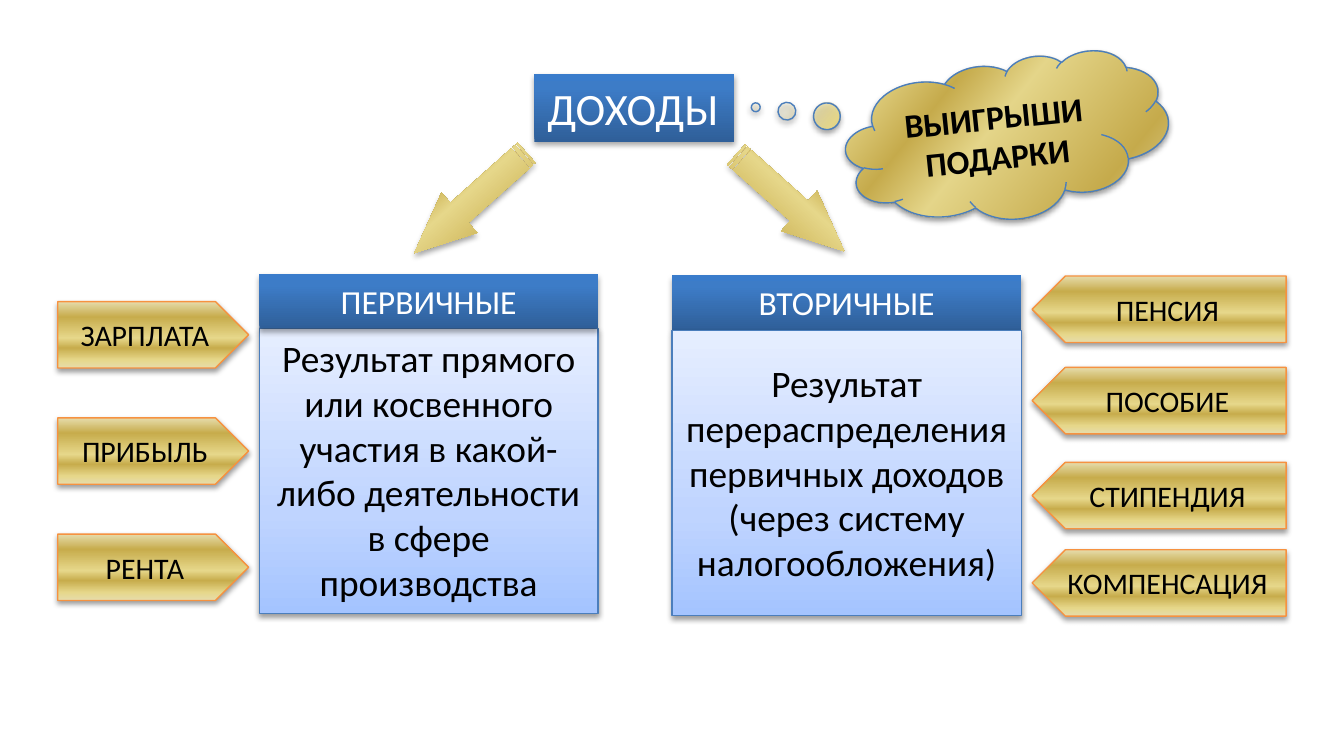
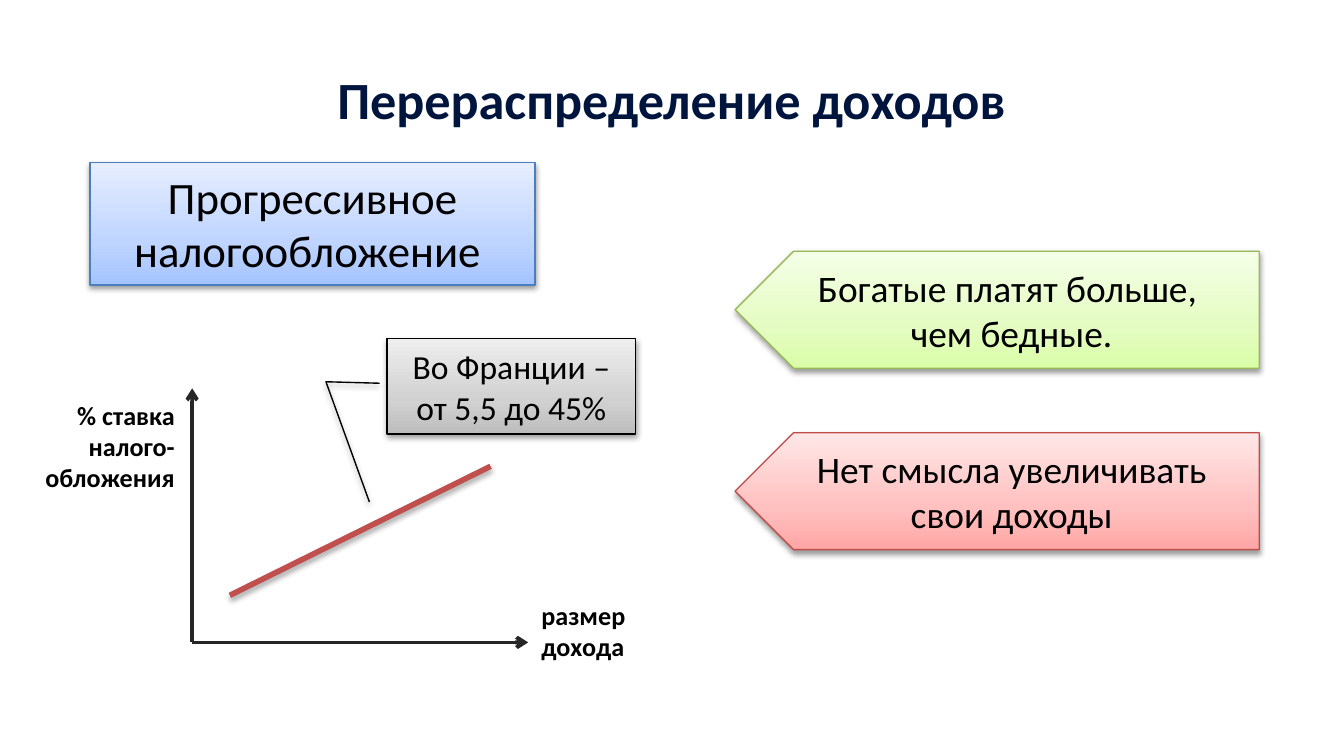
from dataclasses import dataclass
from typing import Any, NamedTuple, Optional

from lxml.etree import SubElement
from pptx import Presentation
from pptx.dml.color import RGBColor
from pptx.enum.shapes import MSO_CONNECTOR, MSO_SHAPE
from pptx.enum.text import MSO_ANCHOR, MSO_AUTO_SIZE, PP_ALIGN
from pptx.oxml.ns import qn
from pptx.util import Inches, Pt

WIDE = Inches(10)
HIGH = WIDE * 9 // 16
CELL = WIDE / 100


class Box(NamedTuple):
    col: float
    row: float
    wide: float
    high: float


class Stop(NamedTuple):
    at: int
    tint: str
    clear: int = 100


class Paint(NamedTuple):
    stops: tuple[Stop, ...]
    angle: int = 270


class Shade(NamedTuple):
    alpha: int
    gap: float


def three(low: str, mid: str, top: str) -> Paint:
    return Paint((Stop(0, low), Stop(35, mid), Stop(100, top)))


def metal(clear: int = 100, angle: int = 270) -> Paint:
    tints = ("E6D78A", "C7AC4C", "E6D78A", "C7AC4C", "E6DCAC")
    rest = tuple(Stop(at, tint) for at, tint in zip((12, 30, 45, 77, 100), tints))
    return Paint((Stop(0, "E6DCAC", clear), *rest), angle)


@dataclass(frozen=True)
class Theme:
    font: str = "Calibri"
    black: str = "000000"
    white: str = "FFFFFF"
    navy: str = "00153E"
    axis: str = "262626"
    trend: str = "C0504D"
    edge: str = "4B7EBC"
    rim: str = "F69240"
    leaf: str = "98B955"
    rose: str = "BF4C48"
    tiny: int = 14
    small: int = 16
    label: int = 18
    body: int = 20
    large: int = 24
    title: int = 28
    thin: float = 0.75
    blue: Paint = Paint((Stop(0, "2F5F99"), Stop(80, "3D7CC7"), Stop(100, "3A7CCB")))
    sky: Paint = three("A4C4FF", "BFD4FF", "E6EEFF")
    gray: Paint = three("BDBDBD", "D1D1D1", "EEEEEE")
    green: Paint = three("DAFDA7", "E4FCC2", "F5FFE7")
    red: Paint = three("FFA6A5", "FFC0BF", "FFE7E7")
    gold: Paint = metal()
    cloud: Paint = metal(28, 45)
    soft: Shade = Shade(38, 1.6)
    deep: Shade = Shade(35, 1.8)


THEME = Theme()


@dataclass(frozen=True)
class Words:
    text: str
    size: int = THEME.body
    tint: str = THEME.black
    bold: bool = False
    align: PP_ALIGN = PP_ALIGN.CENTER
    anchor: MSO_ANCHOR = MSO_ANCHOR.TOP
    wrap: bool = True
    top: float = 0.5


@dataclass(frozen=True)
class Form:
    kind: MSO_SHAPE
    box: Box
    paint: Paint
    line: Optional[str] = None
    shade: Shade = THEME.soft
    words: Optional[Words] = None
    turn: float = 0
    flip: bool = False
    bends: tuple[float, ...] = ()


@dataclass(frozen=True)
class Stroke:
    start: tuple[float, float]
    end: tuple[float, float]
    tint: str
    width: float
    arrow: bool = False
    shade: Optional[Shade] = None


def span(*cells: float) -> list[int]:
    return [round(cell * CELL) for cell in cells]


def write(frame: Any, words: Words) -> None:
    frame.text = words.text
    frame.auto_size = MSO_AUTO_SIZE.NONE
    frame.word_wrap = words.wrap
    frame.vertical_anchor = words.anchor
    frame.margin_top = span(words.top)[0]
    for para in frame.paragraphs:
        para.alignment = words.align
        para.font.name = THEME.font
        para.font.size = Pt(words.size)
        para.font.bold = words.bold
        para.font.color.rgb = RGBColor.from_string(words.tint)


def tone(node: Any, tint: str, alpha: int) -> None:
    color = SubElement(node, qn("a:srgbClr"), val=tint)
    if alpha < 100:
        SubElement(color, qn("a:alpha"), val=str(alpha * 1000))


def blend(item: Any, paint: Paint) -> None:
    item.fill.gradient()
    grad = item.element.spPr.find(qn("a:gradFill"))
    for child in list(grad):
        grad.remove(child)
    grad.set("rotWithShape", "1")
    stops = SubElement(grad, qn("a:gsLst"))
    for stop in paint.stops:
        node = SubElement(stops, qn("a:gs"), pos=str(stop.at * 1000))
        tone(node, stop.tint, stop.clear)
    SubElement(grad, qn("a:lin"), ang=str(paint.angle * 60000), scaled="0")


def cast(item: Any, shade: Optional[Shade]) -> None:
    effects = SubElement(item.element.spPr, qn("a:effectLst"))
    if shade:
        node = SubElement(
            effects, qn("a:outerShdw"), blurRad=str(Pt(3.1)), dist=str(Pt(shade.gap)),
            dir=str(90 * 60000), rotWithShape="0",
        )
        tone(node, THEME.black, shade.alpha)


def edge(item: Any, tint: str, width: float) -> None:
    item.line.color.rgb = RGBColor.from_string(tint)
    item.line.width = Pt(width)


def draw(shapes: Any, form: Form) -> None:
    item = shapes.add_shape(form.kind, *span(*form.box))
    for index, bend in enumerate(form.bends):
        item.adjustments[index] = bend
    item.rotation = form.turn
    if form.flip:
        item.element.spPr.xfrm.set("flipH", "1")
    blend(item, form.paint)
    if form.line:
        edge(item, form.line, THEME.thin)
    else:
        item.line.fill.background()
    cast(item, form.shade)
    if form.words:
        write(item.text_frame, form.words)


def trace(shapes: Any, stroke: Stroke) -> None:
    item = shapes.add_connector(MSO_CONNECTOR.STRAIGHT, *span(*stroke.start, *stroke.end))
    edge(item, stroke.tint, stroke.width)
    if stroke.arrow:
        line = item.element.spPr.find(qn("a:ln"))
        SubElement(line, qn("a:tailEnd"), type="arrow")
    cast(item, stroke.shade)


def note(shapes: Any, box: Box, words: Words) -> None:
    write(shapes.add_textbox(*span(*box)).text_frame, words)


def band(box: Box, text: str, size: int = THEME.label, **more: Any) -> Form:
    words = Words(text, size, THEME.white, **more)
    return Form(MSO_SHAPE.RECTANGLE, box, THEME.blue, shade=THEME.deep, words=words)


def panel(box: Box, text: str, size: int = THEME.body, **more: Any) -> Form:
    words = Words(text, size, **more)
    return Form(MSO_SHAPE.RECTANGLE, box, THEME.sky, THEME.edge, words=words)


def plate(box: Box, text: str, size: int, paint: Paint, line: str, flip: bool) -> Form:
    words = Words(text, size, anchor=MSO_ANCHOR.MIDDLE)
    return Form(MSO_SHAPE.PENTAGON, box, paint, line, words=words, flip=flip)


def income(deck: Any) -> None:
    shapes = deck.slides.add_slide(deck.slide_layouts[6]).shapes
    draw(shapes, band(Box(39.75, 5.5, 14.9, 5.05), "ДОХОДЫ", THEME.large,
                      align=PP_ALIGN.LEFT, wrap=False))
    for col, wide, turn, flip in ((29.4, 11.2, 138.2, False), (53.4, 10.8, 221.8, True)):
        draw(shapes, Form(MSO_SHAPE.STRIPED_RIGHT_ARROW, Box(col, 13.1, wide, 4), THEME.gold,
                          shade=THEME.deep, turn=turn, flip=flip, bends=(0.5, 1.125)))
    draw(shapes, panel(
        Box(19.3, 24.45, 25.2, 21.2),
        "Результат прямого или косвенного участия в какой-либо деятельности в сфере производства",
    ))
    draw(shapes, band(Box(19.3, 20.4, 25.2, 4.04), "ПЕРВИЧНЫЕ"))
    draw(shapes, band(Box(50, 20.5, 26, 4.04), "ВТОРИЧНЫЕ"))
    draw(shapes, panel(
        Box(50, 24.6, 26, 21.2),
        "Результат перераспределения первичных доходов (через систему налогообложения)",
        top=2.2,
    ))
    for index, text in enumerate(("ЗАРПЛАТА", "ПРИБЫЛЬ", "РЕНТА")):
        box = Box(4.3, 22.44 + 8.65 * index, 14.2, 4.94)
        draw(shapes, plate(box, text, THEME.small, THEME.gold, THEME.rim, False))
    gains = {"ПЕНСИЯ": 20.54, "ПОСОБИЕ": 27.34, "СТИПЕНДИЯ": 34.4, "КОМПЕНСАЦИЯ": 40.9}
    for text, row in gains.items():
        box = Box(76.8, row, 18.9, 4.94)
        draw(shapes, plate(box, text, THEME.small, THEME.gold, THEME.rim, True))
    draw(shapes, Form(
        MSO_SHAPE.CLOUD_CALLOUT, Box(62.9, 4.4, 24.1, 11.9), THEME.cloud, THEME.edge,
        words=Words("ВЫИГРЫШИ\nПОДАРКИ", THEME.label, bold=True, anchor=MSO_ANCHOR.MIDDLE),
        turn=354.2, bends=(-0.763, -0.357),
    ))


def graph(shapes: Any) -> None:
    base = (14.3, 47.8)
    for tip in ((14.3, 28.9), (39.3, 47.8)):
        trace(shapes, Stroke(base, tip, THEME.axis, 2, arrow=True))
    note(shapes, Box(2, 29.2, 12, 8.1),
         Words("% ставка налого-обложения", THEME.tiny, bold=True, align=PP_ALIGN.RIGHT))
    note(shapes, Box(39.3, 44.1, 9.1, 5.7),
         Words("размер дохода", THEME.tiny, bold=True, align=PP_ALIGN.LEFT))
    trace(shapes, Stroke((17.1, 44.3), (36.5, 34.7), THEME.trend, 3, shade=THEME.deep))
    draw(shapes, Form(
        MSO_SHAPE.LINE_CALLOUT_2, Box(28.8, 25.2, 18.5, 7.1), THEME.gray, THEME.black,
        words=Words("Во Франции – от 5,5 до 45%", THEME.label, anchor=MSO_ANCHOR.MIDDLE),
        bends=(0.467, -0.03, 0.452, -0.246, 1.713, -0.071),
    ))


def taxes(deck: Any) -> None:
    shapes = deck.slides.add_slide(deck.slide_layouts[5]).shapes
    title = shapes.title
    title.left, title.top, title.width, title.height = span(10.6, 4.5, 78.7, 5.7)
    write(title.text_frame, Words("Перераспределение доходов", THEME.title, THEME.navy, True))
    graph(shapes.add_group_shape().shapes)
    draw(shapes, panel(Box(6.7, 12.1, 33.1, 9.1), "Прогрессивное налогообложение ", THEME.large))
    views = (
        ("Богатые платят больше, \nчем бедные.", THEME.green, THEME.leaf),
        ("Нет смысла увеличивать свои доходы", THEME.red, THEME.rose),
    )
    for index, (text, paint, line) in enumerate(views):
        box = Box(54.7, 18.7 + 13.5 * index, 39, 8.7)
        draw(shapes, plate(box, text, THEME.body, paint, line, True))


def main() -> None:
    deck = Presentation()
    deck.slide_width, deck.slide_height = WIDE, HIGH
    income(deck)
    taxes(deck)
    deck.save("out.pptx")


if __name__ == "__main__":
    main()
